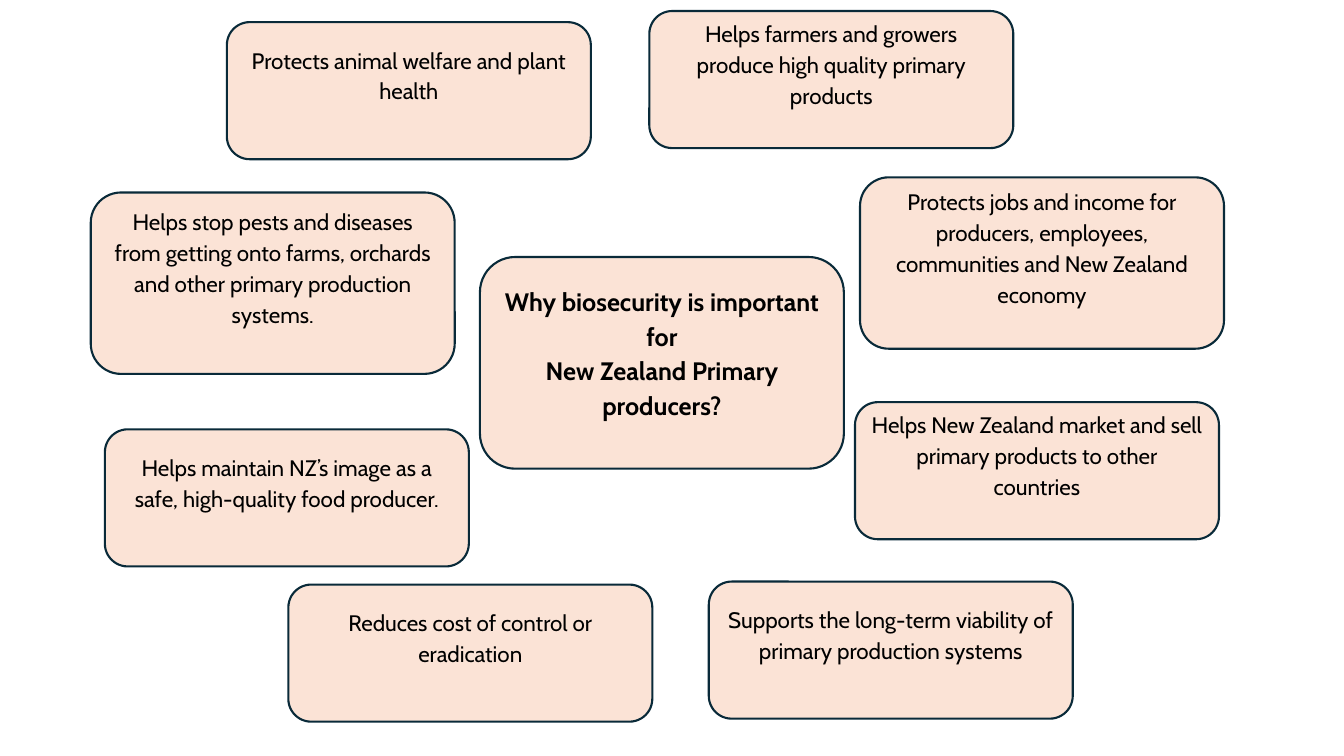
"""Build a slide of eight reasons around a central biosecurity question."""
from pptx import Presentation
from pptx.dml.color import RGBColor
from pptx.enum.shapes import MSO_SHAPE
from pptx.enum.text import MSO_ANCHOR, PP_ALIGN
from pptx.util import Inches, Pt

ROUNDED = MSO_SHAPE.ROUNDED_RECTANGLE
MIDDLE = MSO_ANCHOR.MIDDLE
CENTER = PP_ALIGN.CENTER

FONT = "Cabin"
PEACH, NAVY, BLACK = "FBE3D6", "092A39", "000000"
SLIDE_WIDTH, SLIDE_HEIGHT = 13.33, 7.5
BOX_WIDTH = 3.61
SHORT, MEDIUM, TALL = 1.36, 1.7, 1.8

QUESTION = ["Why biosecurity is important", "for", "New Zealand Primary producers?"]
QUESTION_PLACE = (4.76, 2.55, 2.1)

REASONS = [
    ("Protects animal welfare and plant health", (2.25, 0.22, SHORT)),
    ("Helps farmers and growers produce high quality primary products", (6.44, 0.11, SHORT)),
    ("Protects jobs and income for producers, employees, communities and New Zealand economy",
     (8.53, 1.76, MEDIUM)),
    ("Helps New Zealand market and sell primary products to other countries",
     (8.48, 3.99, SHORT)),
    ("Supports the long-term viability of primary production systems", (7.03, 5.77, SHORT)),
    ("Reduces cost of control or eradication", (2.86, 5.8, SHORT)),
    ("Helps maintain NZ’s image as a safe, high-quality food producer.", (1.04, 4.26, SHORT)),
    ("Helps stop pests and diseases from getting onto farms, orchards and other primary "
     "production systems.", (0.9, 1.91, TALL)),
]


def color(hex_code):
    return RGBColor.from_string(hex_code)


def add_box(slide, lines, place, size, bottom_inset, bold=False):
    left, top, height = place
    box = slide.shapes.add_shape(
        ROUNDED, Inches(left), Inches(top), Inches(BOX_WIDTH), Inches(height))
    box.shadow.inherit = False
    box.fill.solid()
    box.fill.fore_color.rgb = color(PEACH)
    box.line.color.rgb = color(NAVY)
    box.line.width = Pt(1.5)

    frame = box.text_frame
    frame.word_wrap = True
    frame.vertical_anchor = MIDDLE
    frame.margin_bottom = Inches(bottom_inset)
    for index, line in enumerate(lines):
        paragraph = frame.add_paragraph() if index else frame.paragraphs[0]
        paragraph.alignment = CENTER
        paragraph.line_spacing = 1.15
        run = paragraph.add_run()
        run.text = line
        run.font.name = FONT
        run.font.size = Pt(size)
        run.font.bold = bold
        run.font.color.rgb = color(BLACK)


def main():
    deck = Presentation()
    deck.slide_width, deck.slide_height = Inches(SLIDE_WIDTH), Inches(SLIDE_HEIGHT)
    slide = deck.slides.add_slide(deck.slide_layouts[6])
    add_box(slide, QUESTION, QUESTION_PLACE, 18, 0.28, bold=True)
    for reason, place in REASONS:
        add_box(slide, [reason], place, 16, 0.39)
    deck.save("out.pptx")


if __name__ == "__main__":
    main()
